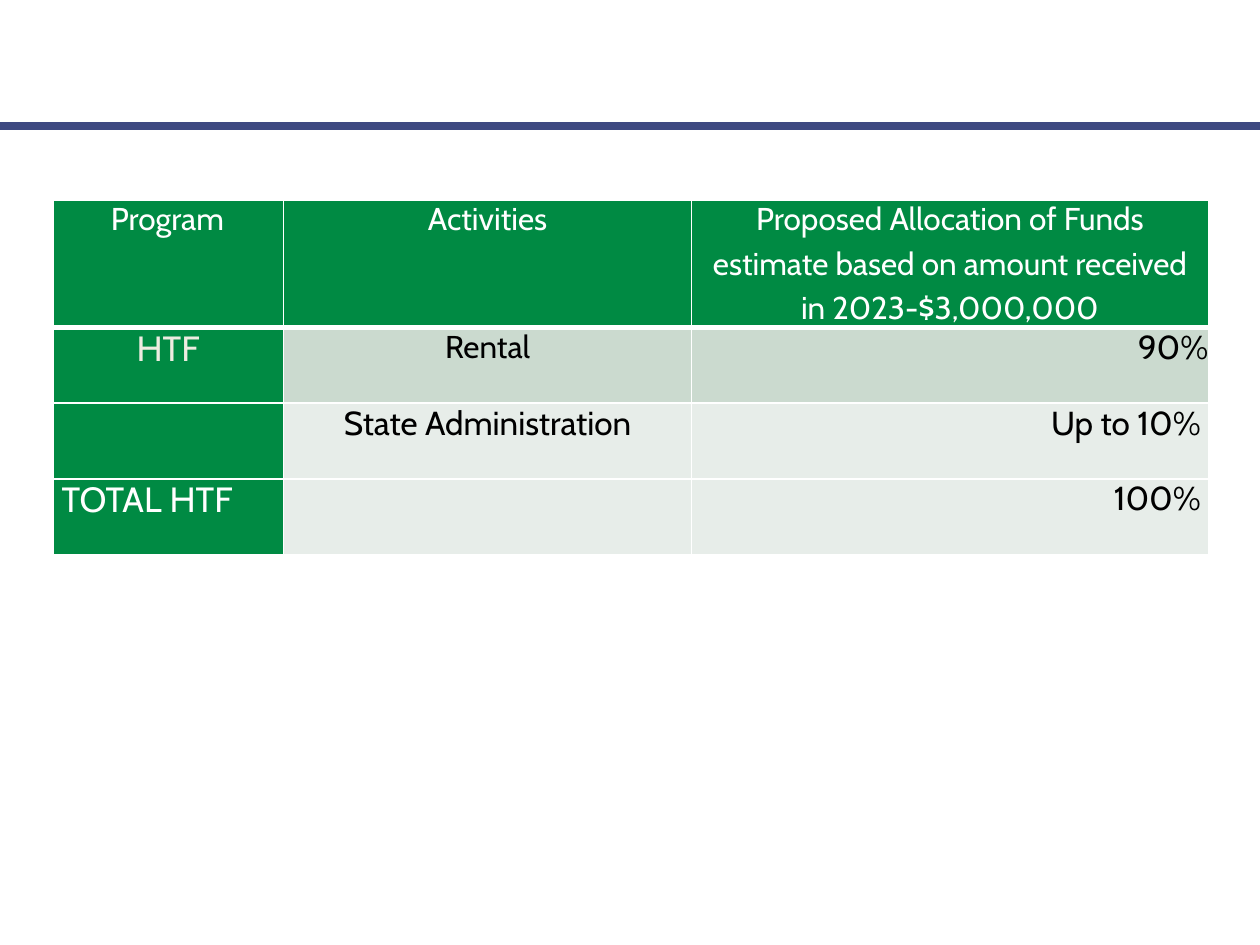
"""Build the HTF funding allocation slide."""
from lxml import etree
from pptx import Presentation
from pptx.dml.color import RGBColor
from pptx.enum.shapes import MSO_CONNECTOR
from pptx.enum.text import PP_ALIGN
from pptx.oxml.ns import qn
from pptx.util import Inches, Pt

LINE = MSO_CONNECTOR.STRAIGHT
LEFT, MID, RIGHT = PP_ALIGN.LEFT, PP_ALIGN.CENTER, PP_ALIGN.RIGHT
GREEN, SAGE, PALE = "008A43", "CBDACF", "E7EDE9"
WHITE, CREAM, BLACK = "FFFFFF", "EEECE1", "000000"


def paint(form, tone):
    form.solid()
    form.fore_color.rgb = RGBColor.from_string(tone)


def edge(cell, side, width):
    line = etree.Element(qn("a:" + side), w=str(Pt(width)))
    fill = etree.SubElement(line, qn("a:solidFill"))
    etree.SubElement(fill, qn("a:srgbClr"), val=WHITE)
    props = cell._tc.get_or_add_tcPr()
    props.insert(len(props.findall("*")) - 1, line)


deck = Presentation()
deck.slide_width, deck.slide_height = Inches(10), Inches(7.5)
slide = deck.slides.add_slide(deck.slide_layouts[6])

rule = slide.shapes.add_connector(LINE, 0, Inches(1), Inches(10), Inches(1))
paint(rule.line.fill, "3E4981")
rule.line.width = Pt(4.5)
etree.SubElement(rule._element.spPr, qn("a:effectLst"))

widths = [1.83, 3.24, 4.1]
heights = [1.01, 0.6, 0.6, 0.6]
# text, size, colour, alignment, left margin, right margin
rows = [
    [("Program", 18, WHITE, LEFT, 0.46, 0),
     ("Activities", 18, WHITE, MID, 0, 0),
     ("Proposed Allocation of Funds\n"
      "estimate based on amount received in 2023-$3,000,000",
      18, WHITE, MID, 0.14, 0.14)],
    [("HTF", 20, CREAM, MID, 0, 0),
     ("Rental", 18, BLACK, MID, 0, 0),
     ("90%", 19, BLACK, RIGHT, 0, 0)],
    [("", 18, WHITE, LEFT, 0, 0),
     ("State Administration", 19, BLACK, MID, 0, 0),
     ("Up to 10%", 19, BLACK, RIGHT, 0, 0.06)],
    [("TOTAL HTF", 20, WHITE, LEFT, 0.07, 0),
     ("", 18, BLACK, LEFT, 0, 0),
     ("100%", 19, BLACK, RIGHT, 0, 0.06)],
]
fills = [GREEN, SAGE, PALE, PALE]

frame = slide.shapes.add_table(
    len(rows), len(widths), Inches(0.42), Inches(1.59),
    Inches(sum(widths)), Inches(sum(heights)))
table = frame.table
table.first_row = table.horz_banding = False
for col, width in zip(table.columns, widths):
    col.width = Inches(width)

for r, row in enumerate(rows):
    table.rows[r].height = Inches(heights[r])
    for c, (text, size, tone, align, left, right) in enumerate(row):
        cell = table.cell(r, c)
        cell.margin_left, cell.margin_right = Inches(left), Inches(right)
        cell.margin_top = cell.margin_bottom = 0
        paint(cell.fill, GREEN if c == 0 else fills[r])
        edge(cell, "lnL", 1)
        edge(cell, "lnR", 1)
        edge(cell, "lnT", 3 if r == 1 else 1)
        edge(cell, "lnB", 3 if r == 0 else 1)
        cell.text_frame.text = text
        for n, para in enumerate(cell.text_frame.paragraphs):
            para.alignment = align
            if n:
                para.line_spacing = 1.15
            for run in para.runs:
                run.font.name = "Cabin"
                run.font.size = Pt(size)
                paint(run.font.fill, tone)

deck.save("out.pptx")
